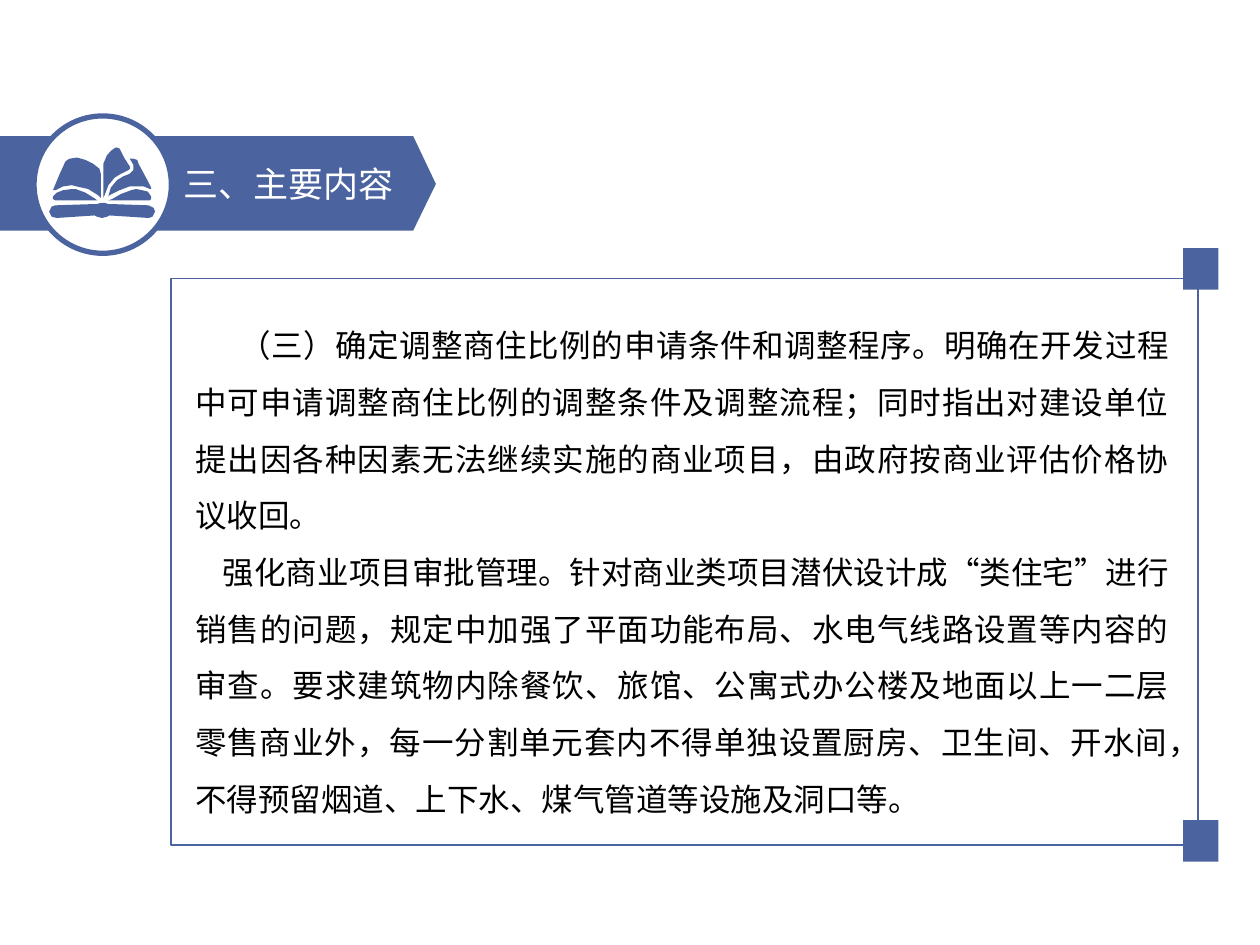
from pptx import Presentation
from pptx.dml.color import RGBColor
from pptx.enum.shapes import MSO_SHAPE
from pptx.enum.text import MSO_AUTO_SIZE, PP_ALIGN
from pptx.oxml.ns import qn
from pptx.util import Pt
from lxml import etree

RECT, OVAL = MSO_SHAPE.RECTANGLE, MSO_SHAPE.OVAL
GROW, JUSTIFY = MSO_AUTO_SIZE.SHAPE_TO_FIT_TEXT, PP_ALIGN.JUSTIFY
PX = 9144  # 100 px to the inch
COLORS = {"blue": "4B649F", "white": "FFFFFF", "black": "000000"}


def paint(shape, fill=None, line=None, width=1):
    """Set fill and outline; None leaves the part empty."""
    shape.shadow.inherit = False
    if fill:
        shape.fill.solid()
        shape.fill.fore_color.rgb = RGBColor.from_string(COLORS[fill])
    else:
        shape.fill.background()
    if line:
        shape.line.color.rgb = RGBColor.from_string(COLORS[line])
        shape.line.width = Pt(width)
    else:
        shape.line.fill.background()


def draw_outline(shapes, points):
    """Draw a closed blue outline through points in px."""
    builder = shapes.build_freeform(*points[0], scale=PX)
    builder.add_line_segments(points[1:], close=True)
    paint(builder.convert_to_shape(), "blue")


prs = Presentation()
prs.slide_width, prs.slide_height = 1000 * PX, 750 * PX
slide = prs.slides.add_slide(prs.slide_layouts[6])
shapes = slide.shapes

# Title ribbon and badge
draw_outline(shapes, [(0, 108), (328, 108), (346, 146), (328, 183), (0, 183)])
badge = shapes.add_shape(OVAL, 27 * PX, 92 * PX, 109 * PX, 109 * PX)
paint(badge, "white", "blue", 3)

# Open book
book_parts = [
    # left page
    [(79, 134), (80, 138), (80, 157), (78, 155), (70, 150), (61, 148), (57, 147),
     (50, 148), (44, 151), (42, 151), (47, 139), (52, 128), (55, 126), (61, 125),
     (68, 127), (74, 130)],
    # turning page
    [(91, 141), (86, 147), (83, 155), (82, 157), (82, 130), (85, 123), (89, 119),
     (92, 117), (95, 118), (99, 126), (103, 132), (103, 134), (102, 135), (96, 138)],
    # right page edge
    [(118, 153), (117, 152), (113, 151), (108, 150), (104, 151), (96, 154),
     (89, 158), (86, 159), (119, 159), (120, 158), (120, 156)],
    # cover
    [(118, 173), (87, 171), (85, 172), (81, 173), (77, 172), (75, 171), (45, 173),
     (41, 172), (39, 168), (41, 164), (44, 163), (74, 162), (77, 162), (80, 161),
     (83, 161), (86, 162), (89, 162), (118, 163), (122, 165), (123, 168), (121, 172)],
    # left page edge
    [(76, 158), (68, 153), (60, 150), (57, 150), (50, 151), (45, 153), (42, 156),
     (42, 158), (44, 159), (77, 159)],
    # right page
    [(120, 149), (117, 143), (110, 130), (109, 127), (106, 126), (103, 126),
     (106, 131), (106, 135), (103, 138), (98, 140), (93, 143), (88, 149), (86, 156),
     (87, 155), (95, 151), (103, 148), (108, 148), (114, 148), (119, 150), (120, 150)],
]
book = shapes.add_group_shape()
for points in book_parts:
    draw_outline(book.shapes, points)

# Title
title = shapes.add_textbox(136 * PX, 124 * PX, 193 * PX, 44 * PX).text_frame
title.word_wrap = True
title.auto_size = GROW
title.text = "三、主要内容"
title_font = title.paragraphs[0].runs[0].font
title_font.name, title_font.size = "Arial", Pt(20)
title_font.color.rgb = RGBColor.from_string(COLORS["white"])

# Frame with its two corner blocks
frame = shapes.add_shape(RECT, 136 * PX, 221 * PX, 815 * PX, 450 * PX)
paint(frame, line="blue")
for top in (197, 651):
    corner = shapes.add_shape(RECT, 939 * PX, top * PX, 28 * PX, 33 * PX)
    paint(corner, "blue")

# Body: first-line indent in px, then the wording
body_paragraphs = [
    (35, "（三）确定调整商住比例的申请条件和调整程序。明确在开发过程中可申请调整商住比例的"
         "调整条件及调整流程；同时指出对建设单位提出因各种因素无法继续实施的商业项目，"
         "由政府按商业评估价格协议收回。"),
    (22, "强化商业项目审批管理。针对商业类项目潜伏设计成“类住宅”进行销售的问题，"
         "规定中加强了平面功能布局、水电气线路设置等内容的审查。要求建筑物内除餐饮、旅馆、"
         "公寓式办公楼及地面以上一二层零售商业外，每一分割单元套内不得单独设置厨房、卫生间、"
         "开水间，不得预留烟道、上下水、煤气管道等设施及洞口等。"),
]
body = shapes.add_textbox(145 * PX, 239 * PX, 793 * PX, 419 * PX).text_frame
body.word_wrap = True
body.auto_size = GROW
body.text = "\n".join(wording for _, wording in body_paragraphs)
for paragraph, (indent, _) in zip(body.paragraphs, body_paragraphs):
    paragraph.alignment = JUSTIFY
    paragraph.line_spacing = 1.5
    paragraph._p.get_or_add_pPr().set("indent", str(indent * PX))
    font = paragraph.runs[0].font
    font.name, font.size = "Noto Sans CJK SC", Pt(18)
    font.color.rgb = RGBColor.from_string(COLORS["black"])
    east_asian = etree.SubElement(font._element, qn("a:ea"))
    east_asian.set("typeface", "Noto Sans CJK SC")

prs.save("out.pptx")
